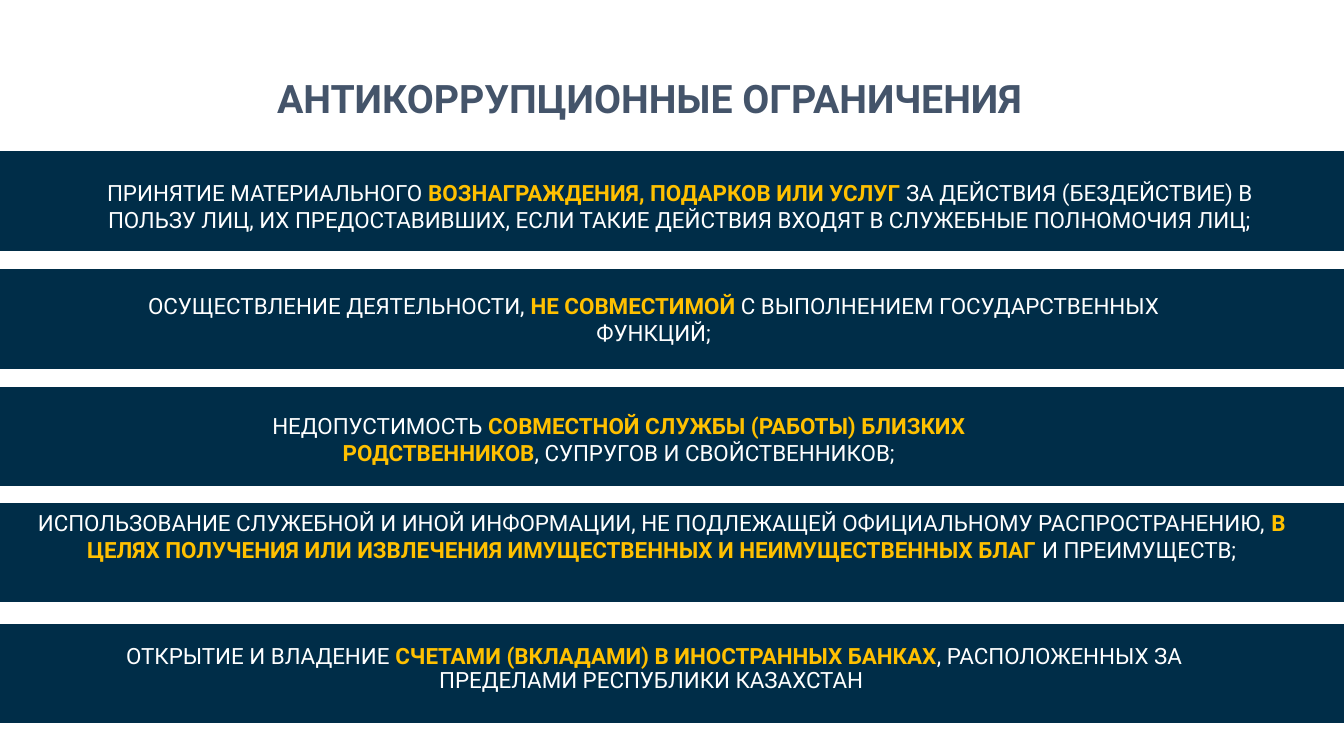
from pptx import Presentation
from pptx.dml.color import RGBColor
from pptx.enum.shapes import MSO_SHAPE
from pptx.enum.text import MSO_ANCHOR, PP_ALIGN
from pptx.util import Pt

RECTANGLE = MSO_SHAPE.RECTANGLE
TOP, MIDDLE = MSO_ANCHOR.TOP, MSO_ANCHOR.MIDDLE
CENTER = PP_ALIGN.CENTER

COLORS = {"band": "002D48", "title": "44546A", "text": "FFFFFF", "accent": "FFC000"}
SLIDE_WIDTH, SLIDE_HEIGHT = 960, 540
BAND_HEIGHT = 69.84

TITLE = "АНТИКОРРУПЦИОННЫЕ ОГРАНИЧЕНИЯ "

# Band top, text box (left, top, width, height), line spacing,
# then the text before, inside and after the accent
RESTRICTIONS = [
    (108.72, (47.52, 124.56, 876.24, 46.08), 1,
     ("ПРИНЯТИЕ МАТЕРИАЛЬНОГО ",
      "ВОЗНАГРАЖДЕНИЯ, ПОДАРКОВ ИЛИ УСЛУГ ",
      "ЗА ДЕЙСТВИЯ (БЕЗДЕЙСТВИЕ) В ПОЛЬЗУ ЛИЦ, ИХ ПРЕДОСТАВИВШИХ, "
      "ЕСЛИ ТАКИЕ ДЕЙСТВИЯ ВХОДЯТ В СЛУЖЕБНЫЕ ПОЛНОМОЧИЯ ЛИЦ;")),
    (192.96, (94.32, 205.2, 745.2, 46.08), 1,
     ("ОСУЩЕСТВЛЕНИЕ ДЕЯТЕЛЬНОСТИ, ",
      "НЕ СОВМЕСТИМОЙ",
      " С ВЫПОЛНЕНИЕМ ГОСУДАРСТВЕННЫХ ФУНКЦИЙ;")),
    (277.2, (141.12, 290.88, 601.92, 46.08), 1,
     ("НЕДОПУСТИМОСТЬ ",
      "СОВМЕСТНОЙ СЛУЖБЫ (РАБОТЫ) БЛИЗКИХ РОДСТВЕННИКОВ",
      ", СУПРУГОВ И СВОЙСТВЕННИКОВ;")),
    (360, (15.84, 360, 913.68, 65.52), 1,
     ("ИСПОЛЬЗОВАНИЕ СЛУЖЕБНОЙ И ИНОЙ ИНФОРМАЦИИ, НЕ ПОДЛЕЖАЩЕЙ "
      "ОФИЦИАЛЬНОМУ РАСПРОСТРАНЕНИЮ, ",
      "В ЦЕЛЯХ ПОЛУЧЕНИЯ ИЛИ ИЗВЛЕЧЕНИЯ ИМУЩЕСТВЕННЫХ И НЕИМУЩЕСТВЕННЫХ БЛАГ",
      " И ПРЕИМУЩЕСТВ;")),
    (446.4, (53.28, 457.2, 828, 46.08), 0.9,
     ("ОТКРЫТИЕ И ВЛАДЕНИЕ ",
      "СЧЕТАМИ (ВКЛАДАМИ) В ИНОСТРАННЫХ БАНКАХ",
      ", РАСПОЛОЖЕННЫХ ЗА ПРЕДЕЛАМИ РЕСПУБЛИКИ КАЗАХСТАН ")),
]


def rgb(name):
    return RGBColor.from_string(COLORS[name])


def add_run(paragraph, text, size=16, color="text", bold=False, font="Roboto"):
    run = paragraph.add_run()
    run.text = text
    run.font.name = font
    run.font.size = Pt(size)
    run.font.bold = bold
    run.font.color.rgb = rgb(color)


class SlideBuilder:
    """Holds the current slide and draws its elements in one style."""

    def __init__(self, slide):
        self.slide = slide

    def prepare(self, shape, anchor, line_spacing):
        """Set up the text frame and return its first paragraph."""
        frame = shape.text_frame
        frame.word_wrap = True
        frame.vertical_anchor = anchor
        paragraph = frame.paragraphs[0]
        paragraph.alignment = CENTER
        paragraph.line_spacing = line_spacing
        return paragraph

    def title(self, text, left, top, width, height):
        title = self.slide.shapes.title
        title.left, title.top = Pt(left), Pt(top)
        title.width, title.height = Pt(width), Pt(height)
        paragraph = self.prepare(title, MIDDLE, 0.9)
        add_run(paragraph, text, size=28, color="title", bold=True)

    def band(self, top):
        band = self.slide.shapes.add_shape(
            RECTANGLE, Pt(0), Pt(top), Pt(SLIDE_WIDTH), Pt(BAND_HEIGHT))
        band.shadow.inherit = False
        band.fill.solid()
        band.fill.fore_color.rgb = rgb("band")
        band.line.color.rgb = rgb("band")
        band.line.width = Pt(1)

    def restriction(self, box, line_spacing, parts):
        text_box = self.slide.shapes.add_textbox(*map(Pt, box))
        paragraph = self.prepare(text_box, TOP, line_spacing)
        before, accent, after = parts
        add_run(paragraph, before)
        add_run(paragraph, accent, color="accent", bold=True)
        add_run(paragraph, after)


def main():
    presentation = Presentation()
    presentation.slide_width = Pt(SLIDE_WIDTH)
    presentation.slide_height = Pt(SLIDE_HEIGHT)
    title_only = presentation.slide_layouts.get_by_name("Title Only")
    builder = SlideBuilder(presentation.slides.add_slide(title_only))

    builder.title(TITLE, 53.28, 26.64, 828, 90)
    for band_top, box, line_spacing, parts in RESTRICTIONS:
        builder.band(band_top)
        builder.restriction(box, line_spacing, parts)

    presentation.save("out.pptx")


if __name__ == "__main__":
    main()
